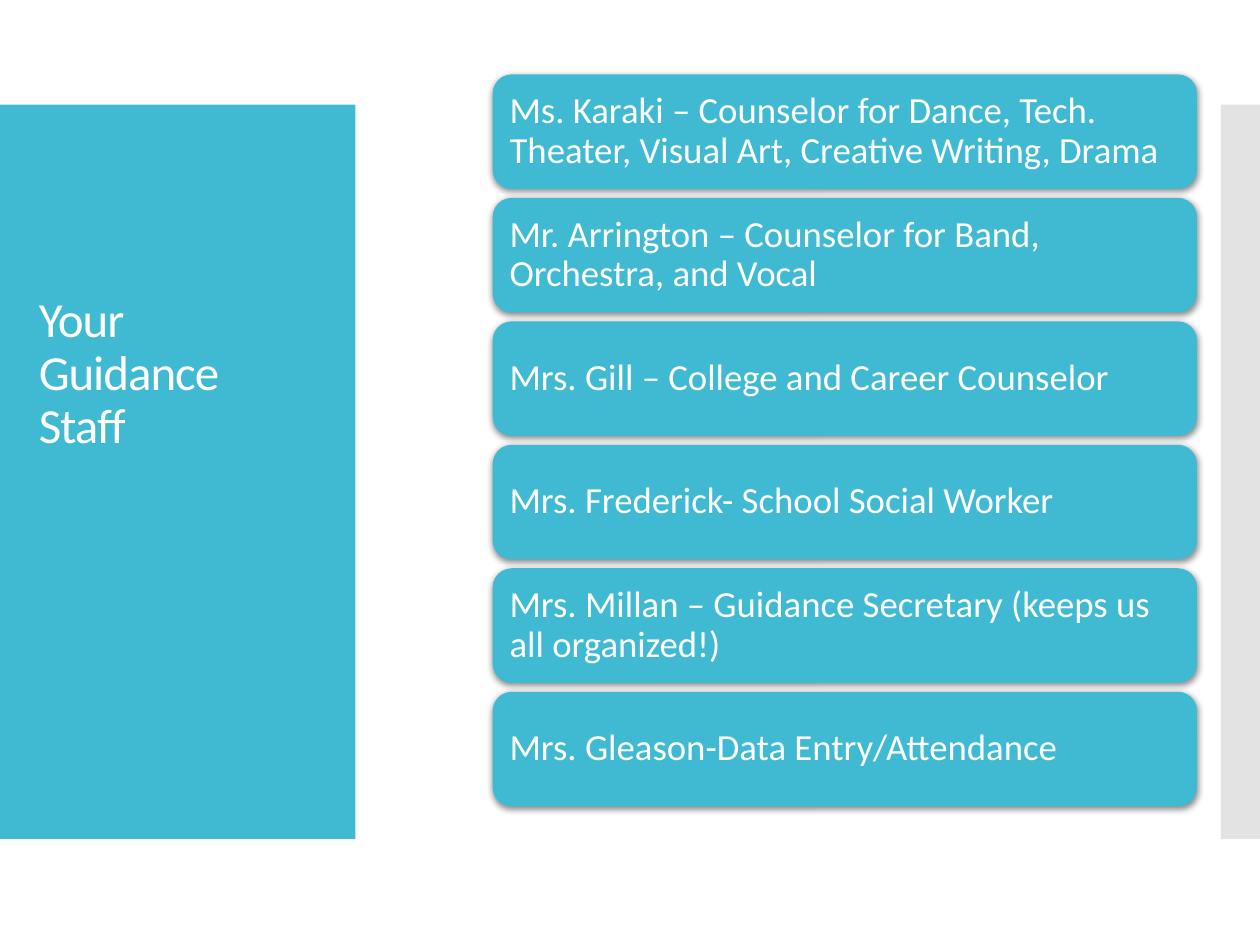
from dataclasses import dataclass

from lxml import etree
from pptx import Presentation
from pptx import util as u
from pptx.dml.color import RGBColor
from pptx.enum import shapes, text
from pptx.oxml import parse_xml
from pptx.oxml.ns import nsdecls, qn


@dataclass(frozen=True)
class Theme:
    accent: str = "40BAD2"
    edge: str = "C8C8C8"
    light: str = "FFFFFF"
    font: str = "Calibri"
    title_size: float = 28
    card_size: float = 21


STAFF = (
    "Ms. Karaki – Counselor for Dance, Tech. Theater, Visual Art, "
    "Creative Writing, Drama",
    "Mr. Arrington – Counselor for Band, Orchestra, and Vocal",
    "Mrs. Gill – College and Career Counselor",
    "Mrs. Frederick- School Social Worker",
    "Mrs. Millan – Guidance Secretary (keeps us all organized!)",
    "Mrs. Gleason-Data Entry/Attendance",
)
CARD_LEFT, CARD_TOP, CARD_WIDTH, CARD_HEIGHT = 3.91, 0.59, 5.59, 0.91
CARD_PITCH = 0.98

SHADOW = (
    f'<a:effectLst {nsdecls("a")}>'
    '<a:outerShdw blurRad="44450" dist="13970" dir="5400000" rotWithShape="0">'
    '<a:srgbClr val="000000"><a:alpha val="45000"/></a:srgbClr>'
    "</a:outerShdw></a:effectLst>"
)


def set_all(obj, values):
    for name, value in values.items():
        setattr(obj, name, value)


class SlideBuilder:
    def __init__(self, slide, theme):
        self.s = slide
        self.theme = theme

    def shape(self, kind, box, color, alpha=None):
        """Add a filled shape without outline; alpha is opacity in percent."""
        sp = self.s.shapes.add_shape(kind, *map(u.Inches, box))
        sp.shadow.inherit = False
        sp.fill.solid()
        sp.fill.fore_color.rgb = RGBColor.from_string(color)
        sp.line.fill.background()
        if alpha is not None:
            clr = sp._element.spPr.find(qn("a:solidFill"))[0]
            etree.SubElement(clr, qn("a:alpha")).set("val", str(alpha * 1000))
        return sp

    def panel(self, box, color, alpha=None):
        return self.shape(shapes.MSO_SHAPE.RECTANGLE, box, color, alpha)

    def add_words(self, sp, words, size, frame):
        tf = sp.text_frame
        set_all(tf, {"word_wrap": True, **frame})
        p = tf.paragraphs[0]
        set_all(p, {"alignment": text.PP_ALIGN.LEFT, "line_spacing": 0.9})
        r = p.add_run()
        r.text = words
        set_all(r.font, {"name": self.theme.font, "size": u.Pt(size)})
        r.font.color.rgb = RGBColor.from_string(self.theme.light)
        return r

    def title(self, box, words):
        sp = self.s.shapes.add_textbox(*map(u.Inches, box))
        frame = {"vertical_anchor": text.MSO_ANCHOR.BOTTOM,
                 "margin_right": u.Inches(0.3)}
        r = self.add_words(sp, words, self.theme.title_size, frame)
        r.font._element.set("spc", "-60")

    def card(self, box, words):
        sp = self.shape(shapes.MSO_SHAPE.ROUNDED_RECTANGLE, box,
                        self.theme.accent)
        spPr = sp._element.spPr
        spPr.replace(spPr.find(qn("a:effectLst")), parse_xml(SHADOW))
        frame = {f"margin_{side}": u.Inches(0.09)
                 for side in ("left", "top", "right", "bottom")}
        frame["vertical_anchor"] = text.MSO_ANCHOR.MIDDLE
        self.add_words(sp, words, self.theme.card_size, frame)


def main():
    prs = Presentation()
    set_all(prs, {"slide_width": u.Inches(10), "slide_height": u.Inches(7.5)})
    theme = Theme()
    builder = SlideBuilder(prs.slides.add_slide(prs.slide_layouts[6]), theme)

    builder.panel((0, 0.83, 2.82, 5.83), theme.accent)
    builder.panel((9.69, 0.83, 0.31, 5.83), theme.edge, alpha=50)
    builder.title((0.21, 1.25, 2.33, 2.4), "Your Guidance Staff")
    for i, person in enumerate(STAFF):
        top = CARD_TOP + i * CARD_PITCH
        builder.card((CARD_LEFT, top, CARD_WIDTH, CARD_HEIGHT), person)

    prs.save("out.pptx")


if __name__ == "__main__":
    main()
